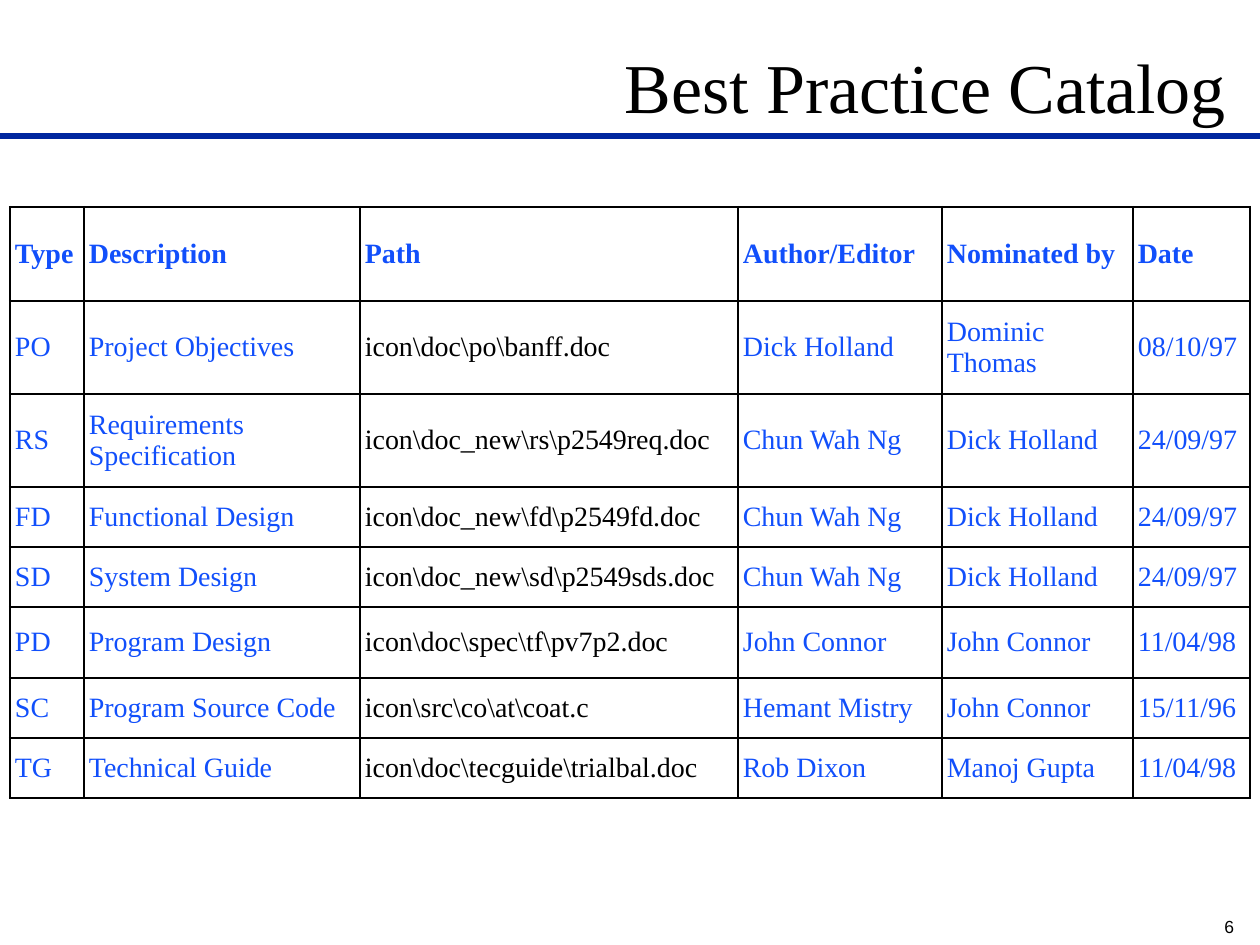
from lxml import etree
from pptx import Presentation
from pptx.dml.color import RGBColor
from pptx.enum.shapes import MSO_CONNECTOR
from pptx.enum.text import MSO_ANCHOR, MSO_AUTO_SIZE, PP_ALIGN
from pptx.oxml.ns import qn
from pptx.util import Pt

STRAIGHT = MSO_CONNECTOR.STRAIGHT
MIDDLE = MSO_ANCHOR.MIDDLE
NO_AUTOFIT = MSO_AUTO_SIZE.NONE
LEFT, RIGHT = PP_ALIGN.LEFT, PP_ALIGN.RIGHT

EMU_PER_PX = 914400 / 126
SLIDE_SIZE = (1260, 945)
TITLE_ONLY = 5
SERIF, SANS = "Times New Roman", "Arial"
COLORS = {"text": "000000", "entry": "114FFB", "rule": "00279F", "border": "000000"}
THIN, THICK = 1, 1.5

COLUMN_WIDTHS = [74, 276, 378, 204, 191, 117]
ROW_HEIGHTS = [94, 93, 93, 60, 60, 71, 60, 60]
FILE_COLUMN = 2
ROWS_ABOVE_THICK_BORDER = {0, 5}
CATALOG = [
    ["Type", "Description", "Path", "Author/Editor", "Nominated by", "Date"],
    ["PO", "Project Objectives", r"icon\doc\po\banff.doc",
     "Dick Holland", "Dominic Thomas", "08/10/97"],
    ["RS", "Requirements Specification", r"icon\doc_new\rs\p2549req.doc",
     "Chun Wah Ng", "Dick Holland", "24/09/97"],
    ["FD", "Functional Design", r"icon\doc_new\fd\p2549fd.doc",
     "Chun Wah Ng", "Dick Holland", "24/09/97"],
    ["SD", "System Design", r"icon\doc_new\sd\p2549sds.doc",
     "Chun Wah Ng", "Dick Holland", "24/09/97"],
    ["PD", "Program Design", r"icon\doc\spec\tf\pv7p2.doc",
     "John Connor", "John Connor", "11/04/98"],
    ["SC", "Program Source Code", r"icon\src\co\at\coat.c",
     "Hemant Mistry", "John Connor", "15/11/96"],
    ["TG", "Technical Guide", r"icon\doc\tecguide\trialbal.doc",
     "Rob Dixon", "Manoj Gupta", "11/04/98"],
]


def px(length):
    return round(length * EMU_PER_PX)


def color(name):
    return RGBColor.from_string(COLORS[name])


class SlideBuilder:
    """Holds the text style and the slide being filled."""

    def __init__(self, slide, font=SERIF):
        self.slide = slide
        self.font = font

    def add_text(self, frame, text, size, color_name="text", bold=False,
                 align=LEFT, font=None):
        paragraph = frame.paragraphs[0]
        paragraph.alignment = align
        run = paragraph.add_run()
        run.text = text
        run.font.name = font or self.font
        run.font.size = Pt(size)
        run.font.bold = bold
        run.font.color.rgb = color(color_name)

    def title(self, text, left, top, width, height):
        shape = self.slide.shapes.title
        shape.left, shape.top = px(left), px(top)
        shape.width, shape.height = px(width), px(height)
        frame = shape.text_frame
        frame.auto_size = NO_AUTOFIT
        frame.vertical_anchor = MIDDLE
        self.add_text(frame, text, 40, align=RIGHT)

    def rule(self, left, right, y, width):
        line = self.slide.shapes.add_connector(
            STRAIGHT, px(left), px(y), px(right), px(y))
        line.line.color.rgb = color("rule")
        line.line.width = Pt(width)
        etree.SubElement(line._element.spPr, qn("a:effectLst"))

    def page_number(self, text, left, top, width, height):
        box = self.slide.shapes.add_textbox(px(left), px(top), px(width), px(height))
        box.text_frame.word_wrap = True
        self.add_text(box.text_frame, text, 10, font=SANS)

    def borders(self, cell, widths):
        """Draw the borders in the order left, right, top, bottom."""
        properties = cell._tc.get_or_add_tcPr()
        for side, width in zip("LRTB", widths):
            line = etree.SubElement(properties, qn(f"a:ln{side}"), w=str(Pt(width)))
            fill = etree.SubElement(line, qn("a:solidFill"))
            etree.SubElement(fill, qn("a:srgbClr"), val=COLORS["border"])

    def table(self, rows, left, top, column_widths, row_heights):
        table = self.slide.shapes.add_table(
            len(rows), len(column_widths), px(left), px(top),
            px(sum(column_widths)), px(sum(row_heights))).table
        table.first_row = table.horz_banding = False
        for column, width in zip(table.columns, column_widths):
            column.width = px(width)
        for row, height in zip(table.rows, row_heights):
            row.height = px(height)
        last_column = len(column_widths) - 1
        for r, texts in enumerate(rows):
            above = THICK if r == 0 or r - 1 in ROWS_ABOVE_THICK_BORDER else THIN
            below = THICK if r in ROWS_ABOVE_THICK_BORDER else THIN
            for c, text in enumerate(texts):
                cell = table.cell(r, c)
                self.borders(cell, [THICK if c == 0 else THIN,
                                    THICK if c == last_column else THIN,
                                    above, below])
                cell.fill.background()
                cell.vertical_anchor = MIDDLE
                cell.margin_left = cell.margin_right = px(5)
                cell.margin_top = cell.margin_bottom = 0
                is_file = r > 0 and c == FILE_COLUMN
                self.add_text(cell.text_frame, text, 16,
                              "text" if is_file else "entry", bold=r == 0)


def main():
    presentation = Presentation()
    presentation.slide_width, presentation.slide_height = map(px, SLIDE_SIZE)
    slide = presentation.slides.add_slide(presentation.slide_layouts[TITLE_ONLY])
    builder = SlideBuilder(slide)
    builder.page_number("6", 1212, 910, 48, 34)
    builder.rule(0, 1260, 136, 3)
    builder.title("Best Practice Catalog", 50, 37, 1189, 97)
    builder.table(CATALOG, 10, 207, COLUMN_WIDTHS, ROW_HEIGHTS)
    presentation.save("out.pptx")


if __name__ == "__main__":
    main()
